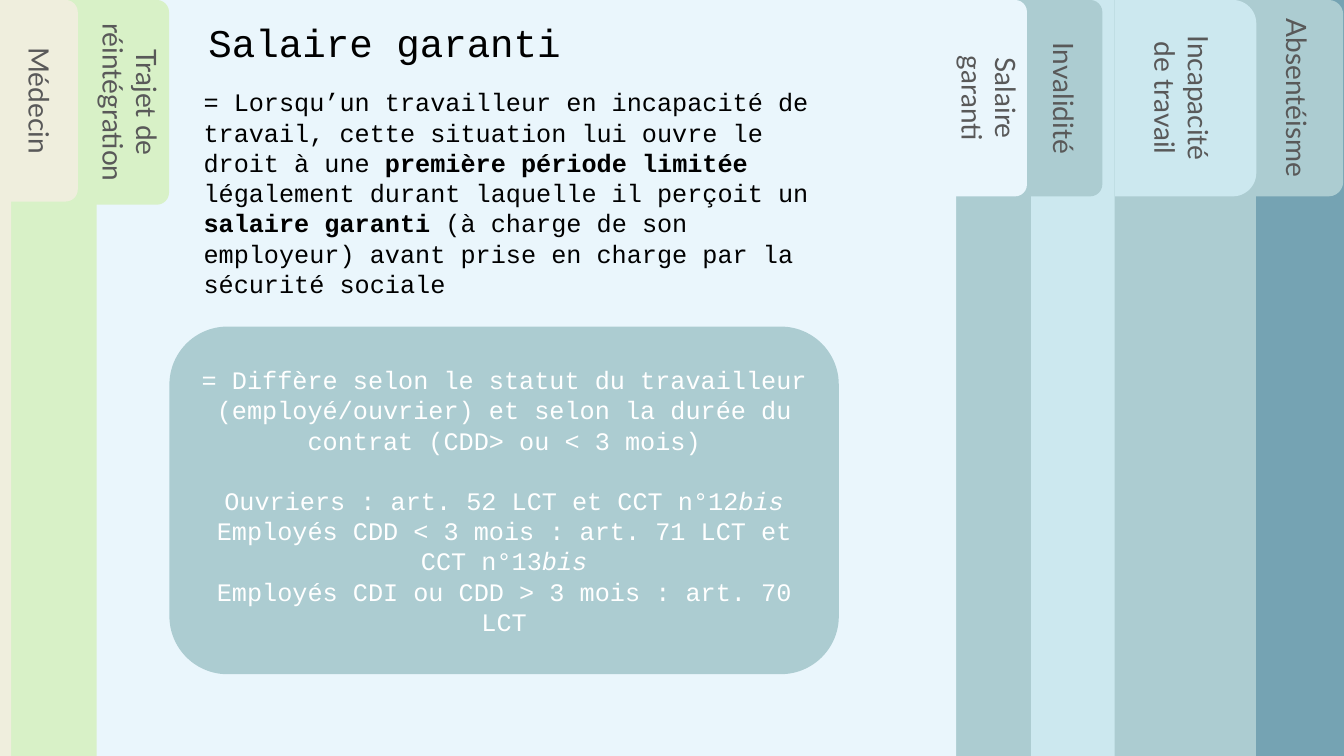
import pptx
import pptx.util
import pptx.dml.color
import pptx.enum.shapes
import pptx.enum.text

Cm = pptx.util.Cm
Pt = pptx.util.Pt
RGBColor = pptx.dml.color.RGBColor
SHAPE = pptx.enum.shapes.MSO_SHAPE
ALIGN = pptx.enum.text.PP_ALIGN
ANCHOR = pptx.enum.text.MSO_ANCHOR

STEEL = RGBColor(0x75, 0xA3, 0xB3)
TEAL = RGBColor(0xAC, 0xCC, 0xD1)
AQUA = RGBColor(0xCC, 0xE8, 0xEF)
ICE = RGBColor(0xEA, 0xF6, 0xFC)
LIME = RGBColor(0xD8, 0xF1, 0xC7)
SAND = RGBColor(0xEF, 0xEE, 0xDD)
GRAY = RGBColor(0x59, 0x59, 0x59)
BLACK = RGBColor(0, 0, 0)
WHITE = RGBColor(0xFF, 0xFF, 0xFF)
MONO = "Courier New"
WIDE, HIGH = 33.87, 19.05

# Sheet right edge, tab left, tab width, tab height, colour, label
SHEETS = [
    (31.65, 31.64, 2.21, 4.95, TEAL, "Absentéisme"),
    (28.09, 28.1, 3.56, 4.95, AQUA, "Incapacité de travail"),
    (25.98, 25.95, 1.83, 4.95, TEAL, "Invalidité"),
    (24.1, 24.08, 1.8, 4.95, ICE, "Salaire garanti"),
    (2.44, 2.41, 1.85, 5.16, LIME, "Trajet de réintégration"),
    (0.28, 0.13, 1.83, 5.08, SAND, "Médecin"),
]

INTRO = [
    ("= Lorsqu’un travailleur en incapacité de travail, cette situation "
     "lui ouvre le droit à une ", False),
    ("première période limitée ", True),
    ("légalement durant laquelle il perçoit un ", False),
    ("salaire garanti ", True),
    ("(à charge de son employeur) avant prise en charge par la "
     "sécurité sociale", False),
]

# Text, italic ending
RULES = [
    ("= Diffère selon le statut du travailleur (employé/ouvrier) et selon "
     "la durée du contrat (CDD> ou < 3 mois)", ""),
    ("Ouvriers : art. 52 LCT et CCT n°12", "bis"),
    ("Employés CDD < 3 mois : art. 71 LCT et CCT n°13", "bis"),
    ("Employés CDI ou CDD > 3 mois : art. 70 LCT", ""),
]


def set_font(para, name, size, color):
    para.font.name = name
    para.font.size = Pt(size)
    para.font.color.rgb = color


def add_block(slide, kind, left, top, width, height, color):
    block = slide.shapes.add_shape(
        kind, Cm(left), Cm(top), Cm(width), Cm(height))
    block.shadow.inherit = False
    block.fill.solid()
    block.fill.fore_color.rgb = color
    block.line.fill.background()
    block.text_frame.word_wrap = True
    block.text_frame.vertical_anchor = ANCHOR.MIDDLE
    return block


def add_sheet(slide, edge, left, width, height, color, label):
    """Draw a sheet up to its right edge, with a tab turned on its side."""
    add_block(slide, SHAPE.RECTANGLE, 0, 0, edge, HIGH, color)
    shift = (height - width) / 2
    tab = add_block(slide, SHAPE.ROUND_2_SAME_RECTANGLE,
                    left - shift, shift, height, width, color)
    tab.rotation = 90
    para = tab.text_frame.paragraphs[0]
    para.text = label
    para.alignment = ALIGN.CENTER
    set_font(para, "Lato", 20, GRAY)


def set_title(slide, left, top, width, height):
    title = slide.shapes.title
    title.left, title.top = Cm(left), Cm(top)
    title.width, title.height = Cm(width), Cm(height)
    title.text_frame.vertical_anchor = ANCHOR.TOP
    para = title.text_frame.paragraphs[0]
    para.text = "Salaire garanti"
    para.alignment = ALIGN.LEFT
    set_font(para, MONO, 28, BLACK)
    # Lift the title above the sheets
    title.element.getparent().append(title.element)


def add_intro(slide, left, top, width, height):
    box = slide.shapes.add_textbox(Cm(left), Cm(top), Cm(width), Cm(height))
    box.text_frame.word_wrap = True
    para = box.text_frame.paragraphs[0]
    set_font(para, MONO, 18, BLACK)
    for text, bold in INTRO:
        run = para.add_run()
        run.text = text
        run.font.bold = bold


def add_rules(slide, left, top, width, height):
    card = add_block(slide, SHAPE.ROUNDED_RECTANGLE,
                     left, top, width, height, TEAL)
    frame = card.text_frame
    for i, (text, end) in enumerate(RULES):
        para = frame.add_paragraph() if i else frame.paragraphs[0]
        para.alignment = ALIGN.CENTER
        if i == 1:
            para.space_before = Pt(21.5)
        set_font(para, MONO, 18, WHITE)
        para.add_run().text = text
        if end:
            run = para.add_run()
            run.text = end
            run.font.italic = True


def main():
    deck = pptx.Presentation()
    deck.slide_width, deck.slide_height = Cm(WIDE), Cm(HIGH)
    slide = deck.slides.add_slide(deck.slide_layouts[5])
    slide.background.fill.solid()
    slide.background.fill.fore_color.rgb = STEEL
    for sheet in SHEETS:
        add_sheet(slide, *sheet)
    set_title(slide, 5, 0.33, 14.2, 1.45)
    add_intro(slide, 4.88, 2.06, 16.56, 6.4)
    add_rules(slide, 4.27, 8.23, 16.87, 8.76)
    deck.save("out.pptx")


if __name__ == "__main__":
    main()
